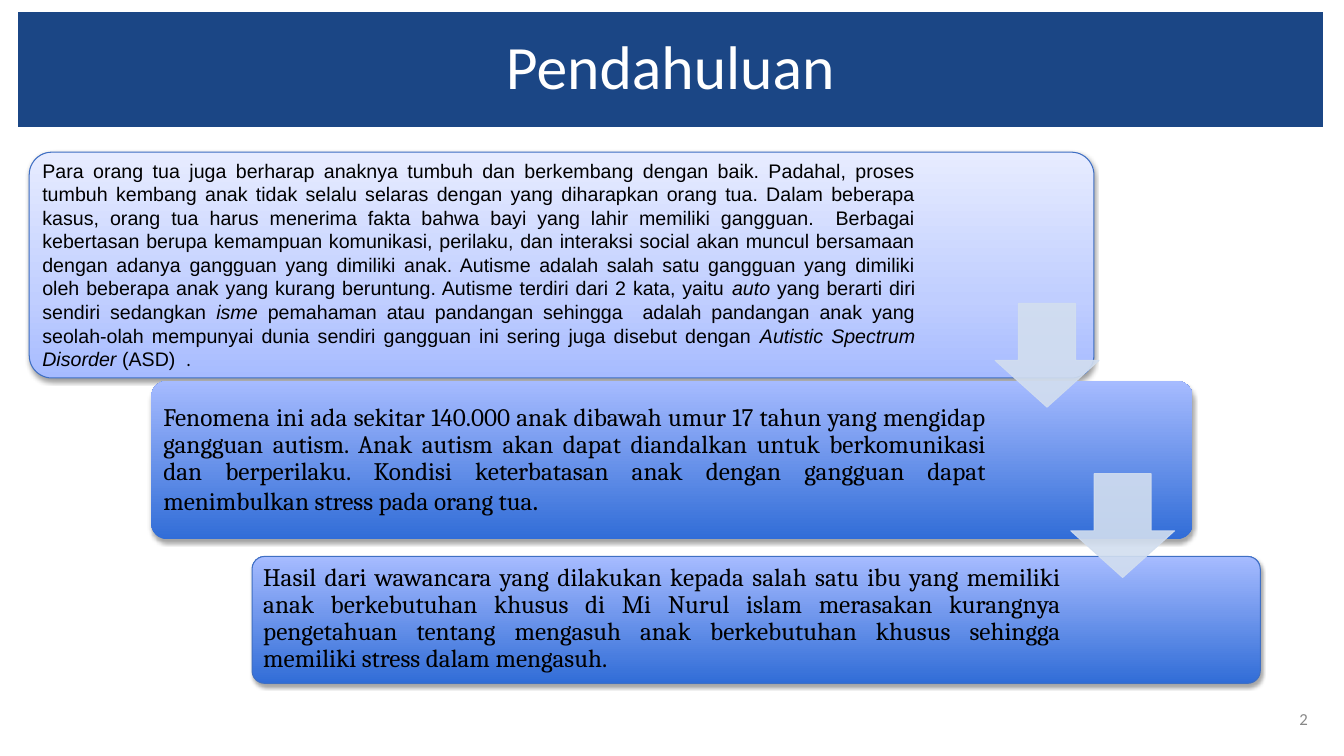
from dataclasses import dataclass
from typing import Any

from lxml.etree import SubElement as Sub
from pptx import Presentation
from pptx.dml.color import RGBColor
from pptx.enum.shapes import MSO_SHAPE as Kind
from pptx.enum.text import MSO_ANCHOR as Anchor, PP_ALIGN as Align
from pptx.oxml.ns import qn
from pptx.util import Emu, Pt

PX = 9144  # one hundred px to the inch
NAVY, EDGE, PALE = "1B4685", "3F6FC3", "D2DEEF"
BLACK, WHITE, GREY = "000000", "FFFFFF", "888888"
LIGHT = ((0, "A6BBFF"), (35, "C0CEFF"), (100, "E7ECFF"))
DEEP = ((0, "316DD7"), (100, "A6BBFF"))

Box = tuple[int, int, int, int]


@dataclass
class Run:
    text: str
    size: int
    font: str
    italic: bool = False
    color: str = BLACK


@dataclass
class Card:
    box: Box
    area: Box
    pad: int
    stops: tuple[tuple[int, str], ...]
    edge: bool
    shade: tuple[int, int]  # opacity in percent, distance in EMU
    runs: list[Run]
    form: dict[str, Any]


def arial(text: str, italic: bool = False) -> Run:
    return Run(text, 14, "Arial", italic)


def serif(text: str, size: int = 18) -> Run:
    return Run(text, size, "Cambria")


TIGHT = {"alignment": Align.JUSTIFY, "line_spacing": 0.9, "space_after": Pt(6)}

CARDS = [
    Card((29, 151, 1056, 224), (36, 157, 878, 211), 6, LIGHT, True, (38, 20000), [
        arial("Para orang tua juga berharap anaknya tumbuh dan berkembang dengan baik. "
              "Padahal, proses tumbuh kembang anak tidak selalu selaras dengan yang "
              "diharapkan orang tua. Dalam beberapa kasus, orang tua harus menerima fakta "
              "bahwa bayi yang lahir memiliki gangguan.  Berbagai kebertasan berupa "
              "kemampuan komunikasi, perilaku, dan interaksi social akan muncul bersamaan "
              "dengan adanya gangguan yang dimiliki anak. Autisme adalah salah satu "
              "gangguan yang dimiliki oleh beberapa anak yang kurang beruntung. Autisme "
              "terdiri dari 2 kata, yaitu "),
        arial("auto", True),
        arial(" yang berarti diri sendiri sedangkan "),
        arial("isme ", True),
        arial("pemahaman atau pandangan sehingga  adalah pandangan anak yang seolah-olah "
              "mempunyai dunia sendiri gangguan ini sering juga disebut dengan "),
        arial("Autistic Spectrum Disorder", True),
        arial(" (ASD)  "),
        serif(".", 14),
    ], {"alignment": Align.JUSTIFY}),
    Card((150, 378, 1033, 157), (155, 383, 830, 148), 7, DEEP, False, (35, 23000), [
        serif("Fenomena ini ada sekitar 140.000 anak dibawah umur 17 tahun yang mengidap "
              "gangguan autism. Anak autism akan dapat diandalkan untuk berkomunikasi dan "
              "berperilaku. Kondisi keterbatasan anak dengan gangguan dapat menimbulkan "
              "stress pada orang tua"),
        serif(".", 20),
    ], TIGHT),
    Card((250, 552, 1000, 126), (254, 555, 805, 118), 7, DEEP, True, (35, 23000), [
        serif("Hasil dari wawancara yang dilakukan kepada salah satu ibu yang memiliki "
              "anak berkebutuhan khusus di Mi Nurul islam merasakan kurangnya pengetahuan "
              "tentang mengasuh anak berkebutuhan khusus sehingga memiliki stress dalam "
              "mengasuh."),
    ], TIGHT),
]
ARROWS: list[Box] = [(987, 301, 103, 103), (1062, 470, 103, 103)]


def rgb(color: str) -> RGBColor:
    return RGBColor.from_string(color)


def emu(box: Box) -> list[Emu]:
    return [Emu(n * PX) for n in box]


def apply(item: Any, form: dict[str, Any]) -> None:
    for name, value in form.items():
        setattr(item, name, value)


def write(shape: Any, runs: list[Run], form: dict[str, Any],
          pad: tuple[int, int] = (10, 5)) -> None:
    """Fill a shape with one paragraph; pad is side and top in px."""
    side, top = (Emu(n * PX) for n in pad)
    frame = shape.text_frame
    apply(frame, {"word_wrap": True, "vertical_anchor": Anchor.MIDDLE,
                  "margin_left": side, "margin_right": side,
                  "margin_top": top, "margin_bottom": top})
    para = frame.paragraphs[0]
    apply(para, form)
    for run in runs:
        part = para.add_run()
        part.text = run.text
        apply(part.font, {"size": Pt(run.size), "name": run.font, "italic": run.italic})
        part.font.color.rgb = rgb(run.color)


def add_shape(slide: Any, kind: Kind, box: Box, adj: tuple[float, ...] = ()) -> Any:
    shape = slide.shapes.add_shape(kind, *emu(box))
    shape.shadow.inherit = False
    shape.line.fill.background()
    for i, value in enumerate(adj):
        shape.adjustments[i] = value
    return shape


def paint(fill: Any, color: str) -> None:
    fill.solid()
    fill.fore_color.rgb = rgb(color)


def outline(shape: Any, color: str) -> None:
    paint(shape.line.fill, color)
    shape.line.width = Pt(0.75)


def add_color(parent: Any, color: str) -> Any:
    return Sub(parent, qn("a:srgbClr"), val=color)


def set_alpha(node: Any, pct: int) -> None:
    Sub(node, qn("a:alpha"), val=str(pct * 1000))


def blend(shape: Any, stops: tuple[tuple[int, str], ...]) -> None:
    """Apply a gradient that runs from bottom to top."""
    shape.fill.gradient()
    shape.fill.gradient_angle = 90
    group = next(shape.element.spPr.iter(qn("a:gsLst")))
    for old in list(group):
        group.remove(old)
    for pos, color in stops:
        add_color(Sub(group, qn("a:gs"), pos=str(pos * 1000)), color)


def cast(shape: Any, alpha: int, dist: int) -> None:
    """Add a soft shadow below the shape."""
    group = shape.element.spPr.find(qn("a:effectLst"))
    shade = Sub(group, qn("a:outerShdw"), blurRad="40000", dist=str(dist),
                dir="5400000", rotWithShape="0")
    set_alpha(add_color(shade, BLACK), alpha)


def add_card(slide: Any, card: Card) -> None:
    shape = add_shape(slide, Kind.ROUNDED_RECTANGLE, card.box, (0.1,))
    blend(shape, card.stops)
    if card.edge:
        outline(shape, EDGE)
    cast(shape, *card.shade)
    label = slide.shapes.add_textbox(*emu(card.area))
    write(label, card.runs, card.form, (card.pad, card.pad))


def add_arrow(slide: Any, box: Box) -> None:
    shape = add_shape(slide, Kind.DOWN_ARROW, box, (0.55, 0.45))
    paint(shape.fill, PALE)
    outline(shape, PALE)
    for node in shape.element.spPr.iter(qn("a:srgbClr")):
        set_alpha(node, 90)


def main() -> None:
    deck = Presentation()
    apply(deck, {"slide_width": Emu(1333 * PX), "slide_height": Emu(750 * PX)})
    slide = deck.slides.add_slide(deck.slide_layouts[6])

    title = add_shape(slide, Kind.RECTANGLE, (18, 12, 1294, 114))
    paint(title.fill, NAVY)
    write(title, [Run("Pendahuluan", 44, "Calibri", color=WHITE)],
          {"alignment": Align.CENTER, "line_spacing": 0.9})
    for card in CARDS:
        add_card(slide, card)
    for box in ARROWS:
        add_arrow(slide, box)
    number = slide.shapes.add_textbox(*emu((1250, 693, 57, 40)))
    write(number, [Run("2", 12, "Calibri", color=GREY)], {"alignment": Align.RIGHT})

    deck.save("out.pptx")


if __name__ == "__main__":
    main()
